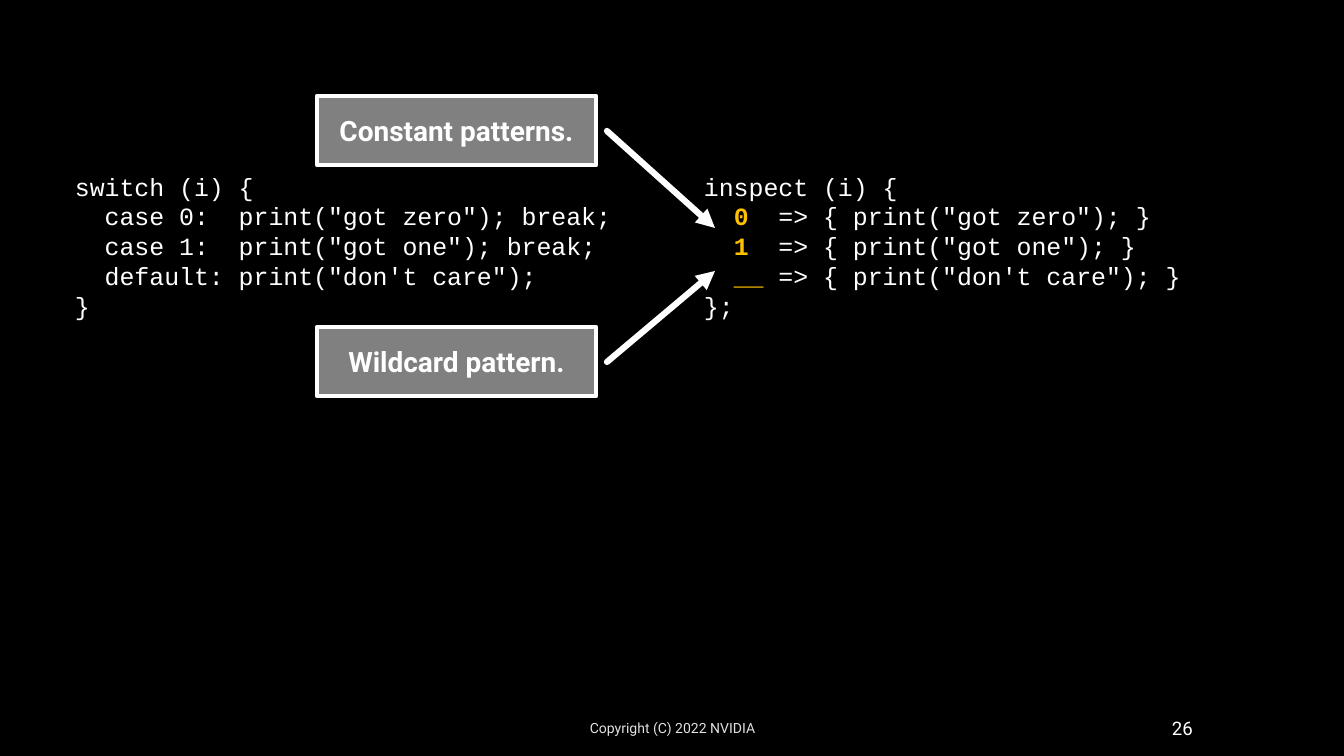
from lxml.etree import SubElement
from pptx import Presentation
from pptx.dml.color import RGBColor
from pptx.enum.shapes import MSO_CONNECTOR, MSO_SHAPE
from pptx.enum.text import MSO_ANCHOR, PP_ALIGN
from pptx.oxml.ns import qn
from pptx.util import Emu, Pt

# Content: each line is a list of (text, is_pattern) spans
SWITCH_CODE = [
    [("switch (i) {", False)],
    [('  case 0:  print("got zero"); break;', False)],
    [('  case 1:  print("got one"); break;', False)],
    [('  default: print("don\'t care");', False)],
    [("}", False)],
]
INSPECT_CODE = [
    [("inspect (i) {", False)],
    [("  ", False), ("0", True), ('  => { print("got zero"); }', False)],
    [("  ", False), ("1", True), ('  => { print("got one"); }', False)],
    [("  ", False), ("__", True), (' => { print("don\'t care"); }', False)],
    [("};", False)],
]
CODE_COLUMNS = [(64, SWITCH_CODE), (693, INSPECT_CODE)]
# Label text, top of its box, height the arrow points to
CALLOUTS = [("Constant patterns.", 96, 228), ("Wildcard pattern.", 327, 271)]
FOOTER = "Copyright (C) 2022 NVIDIA"
PAGE_NUMBER = "26"

WHITE, GOLD, GREY, SILVER, BLACK = "FFFFFF", "FFC000", "808080", "E1E1E1", "000000"
CODE_FONT, TEXT_FONT = "Courier New", "Roboto"
CODE_TOP, CODE_WIDTH, CODE_HEIGHT = 66, 587, 623
CODE_INSET, LINE_PITCH = 105, 30
LABEL_LEFT, LABEL_WIDTH, LABEL_HEIGHT = 317, 279, 69
ARROW_LEFT, ARROW_RIGHT = 607, 715


def px(length):
    return Emu(round(length * 914400 / 112))


def color(value):
    return RGBColor.from_string(value)


def write(frame, lines, *, size, font=TEXT_FONT, fill=WHITE, bold=False,
          align=PP_ALIGN.LEFT, anchor=MSO_ANCHOR.MIDDLE, pitch=None):
    """Fill a text frame; spans flagged as patterns are bold gold."""
    frame.word_wrap = True
    frame.vertical_anchor = anchor
    for index, spans in enumerate(lines):
        para = frame.add_paragraph() if index else frame.paragraphs[0]
        para.alignment = align
        if pitch:
            para.line_spacing = pitch
        for text, is_pattern in spans:
            span = para.add_run()
            span.text = text
            span.font.name = font
            span.font.size = Pt(size)
            span.font.bold = bold or is_pattern
            span.font.color.rgb = color(GOLD if is_pattern else fill)


def add_text(page, left, top, width, height, lines, **style):
    box = page.shapes.add_textbox(px(left), px(top), px(width), px(height))
    write(box.text_frame, lines, **style)
    return box


def add_label(page, text, top):
    box = page.shapes.add_shape(MSO_SHAPE.RECTANGLE, px(LABEL_LEFT), px(top),
                                px(LABEL_WIDTH), px(LABEL_HEIGHT))
    box.shadow.inherit = False
    box.fill.solid()
    box.fill.fore_color.rgb = color(GREY)
    box.line.color.rgb = color(WHITE)
    box.line.width = Pt(3)
    write(box.text_frame, [[(text, False)]], size=18, bold=True,
          align=PP_ALIGN.CENTER)


def add_arrow(page, start, end):
    arrow = page.shapes.add_connector(MSO_CONNECTOR.STRAIGHT,
                                      *map(px, start + end))
    arrow.line.color.rgb = color(WHITE)
    arrow.line.width = Pt(4)
    line = arrow.line._get_or_add_ln()
    line.set("cap", "rnd")
    SubElement(line, qn("a:tailEnd"), type="triangle")
    SubElement(arrow._element.spPr, qn("a:effectLst"))


def main():
    deck = Presentation()
    deck.slide_width, deck.slide_height = px(1344), px(756)
    page = deck.slides.add_slide(deck.slide_layouts[6])
    page.background.fill.solid()
    page.background.fill.fore_color.rgb = color(BLACK)

    # Code columns
    for left, code in CODE_COLUMNS:
        box = add_text(page, left, CODE_TOP, CODE_WIDTH, CODE_HEIGHT, code,
                       size=16, font=CODE_FONT, anchor=MSO_ANCHOR.TOP,
                       pitch=px(LINE_PITCH))
        box.text_frame.margin_top = px(CODE_INSET)

    # Callouts with their arrows
    for text, top, target in CALLOUTS:
        add_label(page, text, top)
        add_arrow(page, (ARROW_LEFT, top + LABEL_HEIGHT // 2 + 1),
                  (ARROW_RIGHT, target))

    # Footer
    add_text(page, 444, 708, 457, 40, [[(FOOTER, False)]], size=9,
             fill=SILVER, align=PP_ALIGN.CENTER)
    add_text(page, 951, 708, 253, 40, [[(PAGE_NUMBER, False)]], size=12,
             align=PP_ALIGN.RIGHT)

    deck.save("out.pptx")


if __name__ == "__main__":
    main()
